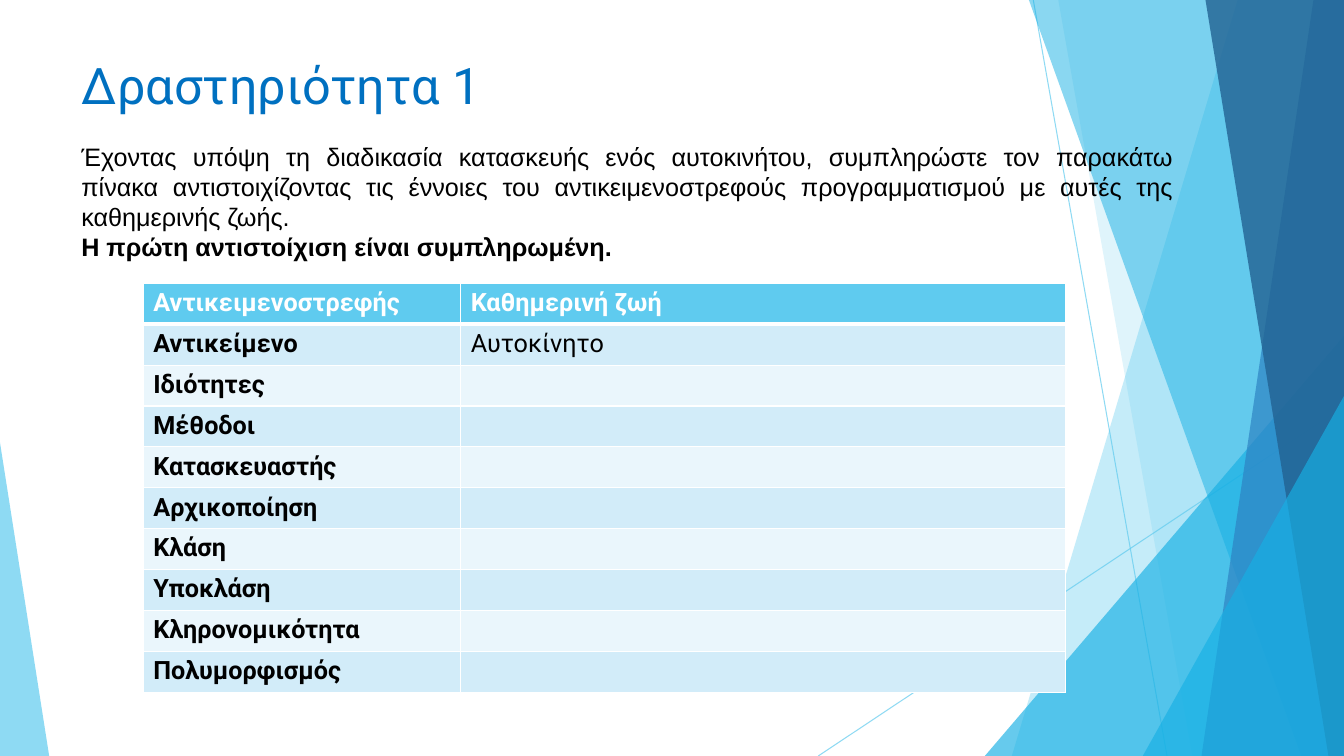
from lxml import etree
from pptx import Presentation
from pptx.dml.color import RGBColor
from pptx.enum.shapes import MSO_CONNECTOR, MSO_SHAPE
from pptx.enum.text import MSO_ANCHOR, MSO_AUTO_SIZE, PP_ALIGN
from pptx.oxml.ns import qn
from pptx.util import Cm, Pt

STRAIGHT = MSO_CONNECTOR.STRAIGHT
TRIANGLE = MSO_SHAPE.ISOSCELES_TRIANGLE
TOP = MSO_ANCHOR.TOP
GROW = MSO_AUTO_SIZE.SHAPE_TO_FIT_TEXT
LEFT, JUSTIFY = PP_ALIGN.LEFT, PP_ALIGN.JUSTIFY

COLORS = {
    "sky": "5FCBEF",
    "cyan": "17B0E4",
    "blue": "2E83C3",
    "navy": "226292",
    "title": "0070C0",
    "text": "000000",
    "white": "FFFFFF",
    "band_dark": "D2ECF9",
    "band_light": "EAF6FC",
}
WIDTH, HEIGHT = 33.87, 19.05
ROW_HEIGHT = 1.03
COLUMN_WIDTHS = (8, 15.24)

TITLE = "Δραστηριότητα 1"
TASK = (
    "Έχοντας υπόψη τη διαδικασία κατασκευής ενός αυτοκινήτου, συμπληρώστε τον "
    "παρακάτω πίνακα αντιστοιχίζοντας τις έννοιες του αντικειμενοστρεφούς "
    "προγραμματισμού με αυτές της καθημερινής ζωής."
)
HINT = "Η πρώτη αντιστοίχιση είναι συμπληρωμένη."
CONCEPTS = [
    ("Αντικειμενοστρεφής", "Καθημερινή ζωή"),
    ("Αντικείμενο", "Αυτοκίνητο"),
    ("Ιδιότητες", ""),
    ("Μέθοδοι", ""),
    ("Κατασκευαστής", ""),
    ("Αρχικοποίηση", ""),
    ("Κλάση", ""),
    ("Υποκλάση", ""),
    ("Κληρονομικότητα", ""),
    ("Πολυμορφισμός", ""),
]


def rgb(name):
    """Return the named colour."""
    return RGBColor.from_string(COLORS[name])


def set_opacity(shape, percent):
    """Make every plain colour of a shape partly transparent."""
    for color in shape.element.iter(qn("a:srgbClr")):
        etree.SubElement(color, qn("a:alpha")).set("val", str(percent * 1000))


def paint(shape, color, opacity):
    """Give a shape a translucent fill without outline or shadow."""
    shape.shadow.inherit = False
    shape.fill.solid()
    shape.fill.fore_color.rgb = rgb(color)
    shape.line.fill.background()
    set_opacity(shape, opacity)


def add_ray(slide, x1, y1, x2, y2):
    """Draw a thin translucent line."""
    ray = slide.shapes.add_connector(STRAIGHT, Cm(x1), Cm(y1), Cm(x2), Cm(y2))
    ray.line.color.rgb = rgb("sky")
    ray.line.width = Pt(0.75)
    set_opacity(ray, 70)
    etree.SubElement(ray.element.spPr, qn("a:effectLst"))


def add_facet(slide, top_x, bottom_x, color, opacity):
    """Draw a full-height facet from a slanted left side to the slide's right edge."""
    builder = slide.shapes.build_freeform(Cm(top_x), 0)
    corners = [(WIDTH, 0), (WIDTH, HEIGHT), (bottom_x, HEIGHT)]
    builder.add_line_segments([(Cm(x), Cm(y)) for x, y in corners])
    paint(builder.convert_to_shape(), color, opacity)


def add_corner(slide, left, width, height, tip, color, opacity):
    """Draw a right triangle standing on the slide's bottom edge."""
    corner = slide.shapes.add_shape(
        TRIANGLE, Cm(left), Cm(HEIGHT - height), Cm(width), Cm(height))
    corner.adjustments[0] = tip
    paint(corner, color, opacity)


def add_run(paragraph, text, size, font, color, bold=False):
    """Append a formatted run."""
    run = paragraph.add_run()
    run.text = text
    run.font.size = Pt(size)
    run.font.name = font
    run.font.bold = bold
    run.font.color.rgb = rgb(color)


def add_decoration(slide):
    """Draw the facets and rays at the slide's edges."""
    add_ray(slide, 26.04, 0, 29.41, HEIGHT)
    add_ray(slide, WIDTH, 10.24, 20.62, HEIGHT)
    add_facet(slide, 31.19, 25.5, "sky", 36)
    add_facet(slide, 26.67, 30.05, "sky", 20)
    add_corner(slide, 24.82, 9.05, 10.59, 1, "cyan", 66)
    add_facet(slide, 25.93, 32.79, "cyan", 50)
    add_facet(slide, 33.1, 30.28, "blue", 70)
    add_facet(slide, 30.38, 33.48, "navy", 80)
    add_corner(slide, 28.8, 5.07, 9.07, 1, "cyan", 66)
    add_corner(slide, 0, 1.24, 7.9, 0, "sky", 70)


def set_title(slide):
    """Place and format the slide's title."""
    title = slide.shapes.title
    title.left, title.top = Cm(1.8), Cm(1.24)
    title.width, title.height = Cm(26.14), Cm(2.18)
    title.text_frame.vertical_anchor = TOP
    heading = title.text_frame.paragraphs[0]
    heading.alignment = LEFT
    add_run(heading, TITLE, 36, "Roboto", "title")


def add_instructions(slide):
    """Add the justified task text and its bold hint."""
    instructions = slide.shapes.add_textbox(Cm(1.8), Cm(3.43), Cm(28.02), Cm(3.33))
    frame = instructions.text_frame
    frame.word_wrap = True
    frame.auto_size = GROW
    task, hint = frame.paragraphs[0], frame.add_paragraph()
    task.alignment = hint.alignment = JUSTIFY
    add_run(task, TASK, 18, "Arial", "text")
    add_run(hint, HINT, 18, "Arial", "text", bold=True)


def set_borders(cell, top, bottom):
    """Give a cell white borders, with its own top and bottom widths in points."""
    properties = cell._tc.get_or_add_tcPr()
    for side, width in (("L", 1), ("R", 1), ("T", top), ("B", bottom)):
        border = etree.SubElement(properties, qn("a:ln" + side), w=str(Pt(width)))
        fill = etree.SubElement(border, qn("a:solidFill"))
        etree.SubElement(fill, qn("a:srgbClr"), val=COLORS["white"])


def add_concept_table(slide):
    """Add the table that matches concepts with everyday life."""
    table = slide.shapes.add_table(
        len(CONCEPTS), len(COLUMN_WIDTHS), Cm(3.61), Cm(7.14),
        Cm(sum(COLUMN_WIDTHS)), Cm(ROW_HEIGHT * len(CONCEPTS))).table
    for column, width in zip(table.columns, COLUMN_WIDTHS):
        column.width = Cm(width)
    for r, concept in enumerate(CONCEPTS):
        table.rows[r].height = Cm(ROW_HEIGHT)
        band = "sky" if r == 0 else ("band_light", "band_dark")[r % 2]
        for c, text in enumerate(concept):
            cell = table.cell(r, c)
            set_borders(cell, 3 if r == 1 else 1, 3 if r == 0 else 1)
            cell.fill.solid()
            cell.fill.fore_color.rgb = rgb(band)
            if text:
                add_run(cell.text_frame.paragraphs[0], text, 18, "Roboto",
                        "white" if r == 0 else "text", bold=r == 0 or c == 0)


def main():
    """Build and save the activity slide."""
    presentation = Presentation()
    presentation.slide_width, presentation.slide_height = Cm(WIDTH), Cm(HEIGHT)
    slide = presentation.slides.add_slide(presentation.slide_layouts[5])
    add_decoration(slide)
    set_title(slide)
    add_instructions(slide)
    add_concept_table(slide)
    presentation.save("out.pptx")


if __name__ == "__main__":
    main()
